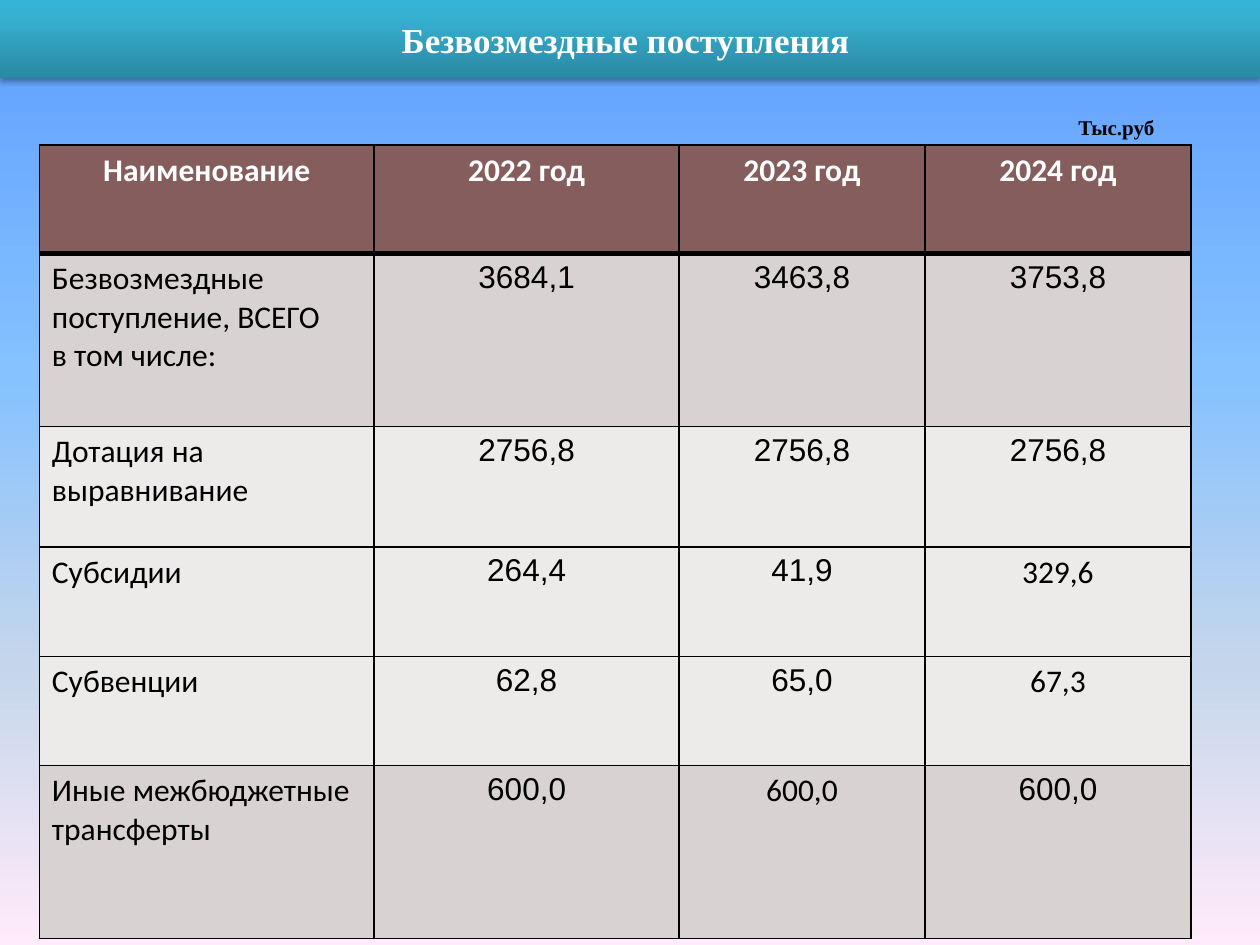
import pptx
import pptx.dml.color
import pptx.enum.shapes
import pptx.enum.text
import pptx.oxml
import pptx.oxml.ns
import pptx.util

Pt = pptx.util.Pt
CENTER = pptx.enum.text.PP_ALIGN.CENTER
LEFT = pptx.enum.text.PP_ALIGN.LEFT
NS = pptx.oxml.ns.nsdecls("a")


def style(paragraph, font, size, color, bold, align=CENTER):
    paragraph.alignment = align
    paragraph.font.name = font
    paragraph.font.size = Pt(size)
    paragraph.font.bold = bold
    paragraph.font.color.rgb = pptx.dml.color.RGBColor.from_string(color)


def set_gradient(owner, fill, angle, stops):
    """Fill with (percent, colour) stops; the angle runs counter-clockwise."""
    fill.gradient()
    fill.gradient_angle = angle
    stop_list = next(owner.element.iter(pptx.oxml.ns.qn("a:gsLst")))
    for old_stop in list(stop_list):
        stop_list.remove(old_stop)
    for percent, color in stops:
        stop_list.append(pptx.oxml.parse_xml(
            f'<a:gs {NS} pos="{percent * 1000}"><a:srgbClr val="{color}"/></a:gs>'))


deck = pptx.Presentation()
deck.slide_width, deck.slide_height = Pt(720), Pt(540)
slide = deck.slides.add_slide(deck.slide_layouts[6])
set_gradient(slide, slide.background.fill, 270,
             [(0, "5E9EFF"), (40, "85C2FF"), (70, "C4D6EB"), (100, "FFEBFA")])

# Title bar
title = slide.shapes.add_shape(pptx.enum.shapes.MSO_SHAPE.RECTANGLE,
                               0, 0, Pt(720), Pt(44.64))
set_gradient(title, title.fill, 90, [(0, "2A88A2"), (80, "37B1D2"), (100, "34B4D6")])
title.line.fill.background()
title.shadow.inherit = False
effects = next(title.element.iter(pptx.oxml.ns.qn("a:effectLst")))
effects.append(pptx.oxml.parse_xml(
    f'<a:outerShdw {NS} blurRad="{Pt(3.1)}" dist="{Pt(1.8)}" dir="5400000" rotWithShape="0">'
    '<a:srgbClr val="000000"><a:alpha val="35000"/></a:srgbClr></a:outerShdw>'))
title.text_frame.text = "Безвозмездные поступления "
title.text_frame.vertical_anchor = pptx.enum.text.MSO_ANCHOR.MIDDLE
style(title.text_frame.paragraphs[0], "Times New Roman", 20, "FFFFFF", True)

# Unit of measure
unit = slide.shapes.add_textbox(Pt(584.64), Pt(61.92), Pt(106.56), Pt(21.6)).text_frame
unit.word_wrap = True
unit.auto_size = pptx.enum.text.MSO_AUTO_SIZE.SHAPE_TO_FIT_TEXT
unit.text = "Тыс.руб"
style(unit.paragraphs[0], "Times New Roman", 12, "000000", True)

# Receipts by year
HEADER, TOTAL, DETAIL = "855D5D", "D9D2D2", "EDEAEA"
receipts = [
    (62, HEADER, ["Наименование", "2022 год", "2023 год", "2024 год"]),
    (98.8, TOTAL, ["Безвозмездные поступление, ВСЕГО\nв том числе:",
                   "3684,1", "3463,8", "3753,8"]),
    (69, DETAIL, ["Дотация на выравнивание", "2756,8", "2756,8", "2756,8"]),
    (62.5, DETAIL, ["Субсидии", "264,4", "41,9", "329,6"]),
    (62.5, DETAIL, ["Субвенции", "62,8", "65,0", "67,3"]),
    (98.8, TOTAL, ["Иные межбюджетные трансферты", "600,0", "600,0", "600,0"]),
]
calibri_values = {(3, 3), (4, 3), (5, 2)}
column_widths = [191.3, 174.3, 140.5, 152]

table = slide.shapes.add_table(len(receipts), len(column_widths), Pt(22.5), Pt(82.8),
                               Pt(sum(column_widths)),
                               Pt(sum(height for height, _, _ in receipts))).table
for column, width in zip(table.columns, column_widths):
    column.width = Pt(width)

for r, (height, color, texts) in enumerate(receipts):
    table.rows[r].height = Pt(height)
    is_header = r == 0
    for c, text in enumerate(texts):
        cell = table.cell(r, c)
        cell.text = text
        is_value = not is_header and c > 0 and (r, c) not in calibri_values
        for paragraph in cell.text_frame.paragraphs:
            style(paragraph, "Arial" if is_value else "Calibri", 18,
                  "FFFFFF" if is_header else "000000", is_header,
                  CENTER if is_header or c > 0 else LEFT)

        border_widths = {"L": 1, "R": 1, "T": 3 if r == 1 else 1, "B": 3 if is_header else 1}
        cell_properties = cell._tc.get_or_add_tcPr()
        for side, width in border_widths.items():
            cell_properties.append(pptx.oxml.parse_xml(
                f'<a:ln{side} {NS} w="{Pt(width)}"><a:solidFill>'
                f'<a:srgbClr val="000000"/></a:solidFill></a:ln{side}>'))
        cell.fill.solid()
        cell.fill.fore_color.rgb = pptx.dml.color.RGBColor.from_string(color)

deck.save("out.pptx")
